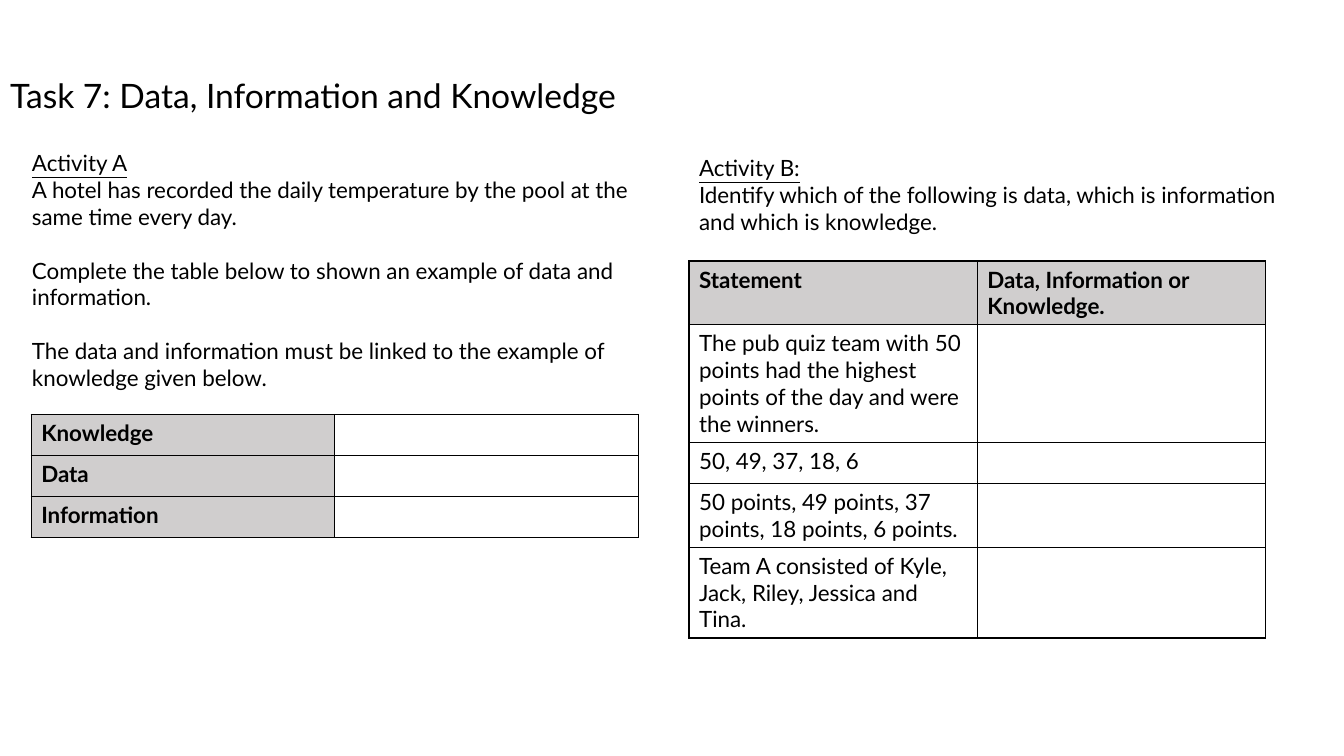
from dataclasses import dataclass

import lxml.etree
import pptx
import pptx.dml.color
import pptx.enum.text
import pptx.oxml.ns
import pptx.util

Pt = pptx.util.Pt
COLORS = {"text": "000000", "border": "000000", "header": "D0CECE", "cell": "FFFFFF"}
FONT = "Lato"
LINE = 19.2
ROW_HEIGHT = 29.3


@dataclass
class Activity:
    left: float
    top: float
    width: float
    height: float
    heading: str
    paragraphs: list[str]


@dataclass
class Grid:
    left: float
    top: float
    col_width: float
    rows: list[list[str]]
    header_row: bool


ACTIVITIES = [
    Activity(15.8, 103, 451.4, 181.4, "Activity A", [
        "A hotel has recorded the daily temperature by the pool at the same time every day.",
        "Complete the table below to shown an example of data and information.",
        "The data and information must be linked to the example of knowledge given below.",
    ]),
    Activity(492.2, 106.5, 428.4, 65.5, "Activity B:", [
        "Identify which of the following is data, which is information and which is knowledge.",
    ]),
]

GRIDS = [
    Grid(22.3, 296, 216.8, [["Knowledge", ""], ["Data", ""], ["Information", ""]], False),
    Grid(492.2, 186.4, 205.9, [
        ["Statement", "Data, Information or Knowledge."],
        ["The pub quiz team with 50 points had the highest points of the day and were the winners.", ""],
        ["50, 49, 37, 18, 6", ""],
        ["50 points, 49 points, 37 points, 18 points, 6 points.", ""],
        ["Team A consisted of Kyle, Jack, Riley, Jessica and Tina.", ""],
    ], True),
]


def rgb(name: str) -> pptx.dml.color.RGBColor:
    return pptx.dml.color.RGBColor.from_string(COLORS[name])


def add_text(p, text: str, *, size: float = 16, bold: bool = False,
             underline: bool = False, before: float = 0) -> None:
    p.alignment = pptx.enum.text.PP_ALIGN.LEFT
    p.space_before = Pt(before)
    r = p.add_run()
    r.text = text
    r.font.name = FONT
    r.font.size = Pt(size)
    r.font.bold = bold
    r.font.underline = underline
    r.font.color.rgb = rgb("text")


def add_title(s, text: str) -> None:
    sp = s.shapes.title
    sp.left, sp.top, sp.width, sp.height = Pt(0), Pt(49.7), Pt(615.6), Pt(36)
    tf = sp.text_frame
    tf.vertical_anchor = pptx.enum.text.MSO_ANCHOR.MIDDLE
    add_text(tf.paragraphs[0], text, size=24)


def add_activity(s, activity: Activity) -> None:
    sp = s.shapes.add_textbox(Pt(activity.left), Pt(activity.top),
                              Pt(activity.width), Pt(activity.height))
    tf = sp.text_frame
    tf.word_wrap = True
    add_text(tf.paragraphs[0], activity.heading, underline=True)
    for i, text in enumerate(activity.paragraphs):
        add_text(tf.add_paragraph(), text, before=LINE if i else 0)


def add_borders(cell) -> None:
    tc_pr = cell._tc.get_or_add_tcPr()
    qn = pptx.oxml.ns.qn
    for i, side in enumerate(("lnL", "lnR", "lnT", "lnB")):
        ln = lxml.etree.Element(qn(f"a:{side}"), w=str(Pt(1)))
        fill = lxml.etree.SubElement(ln, qn("a:solidFill"))
        lxml.etree.SubElement(fill, qn("a:srgbClr"), val=COLORS["border"])
        tc_pr.insert(i, ln)


def add_grid(s, grid: Grid) -> None:
    n_rows, n_cols = len(grid.rows), len(grid.rows[0])
    table = s.shapes.add_table(n_rows, n_cols, Pt(grid.left), Pt(grid.top),
                               Pt(grid.col_width * n_cols), Pt(ROW_HEIGHT * n_rows)).table
    table.first_row = grid.header_row
    table.first_col = not grid.header_row
    table.horz_banding = False
    for i, row in enumerate(grid.rows):
        for j, text in enumerate(row):
            cell = table.cell(i, j)
            is_header = (i if grid.header_row else j) == 0
            cell.fill.solid()
            cell.fill.fore_color.rgb = rgb("header" if is_header else "cell")
            add_borders(cell)
            if text:
                add_text(cell.text_frame.paragraphs[0], text, bold=is_header)


def main() -> None:
    prs = pptx.Presentation()
    prs.slide_width, prs.slide_height = Pt(960), Pt(540)
    s = prs.slides.add_slide(prs.slide_layouts.get_by_name("Title Only"))
    add_title(s, "Task 7: Data, Information and Knowledge")
    for activity in ACTIVITIES:
        add_activity(s, activity)
    for grid in GRIDS:
        add_grid(s, grid)
    prs.save("out.pptx")


if __name__ == "__main__":
    main()
